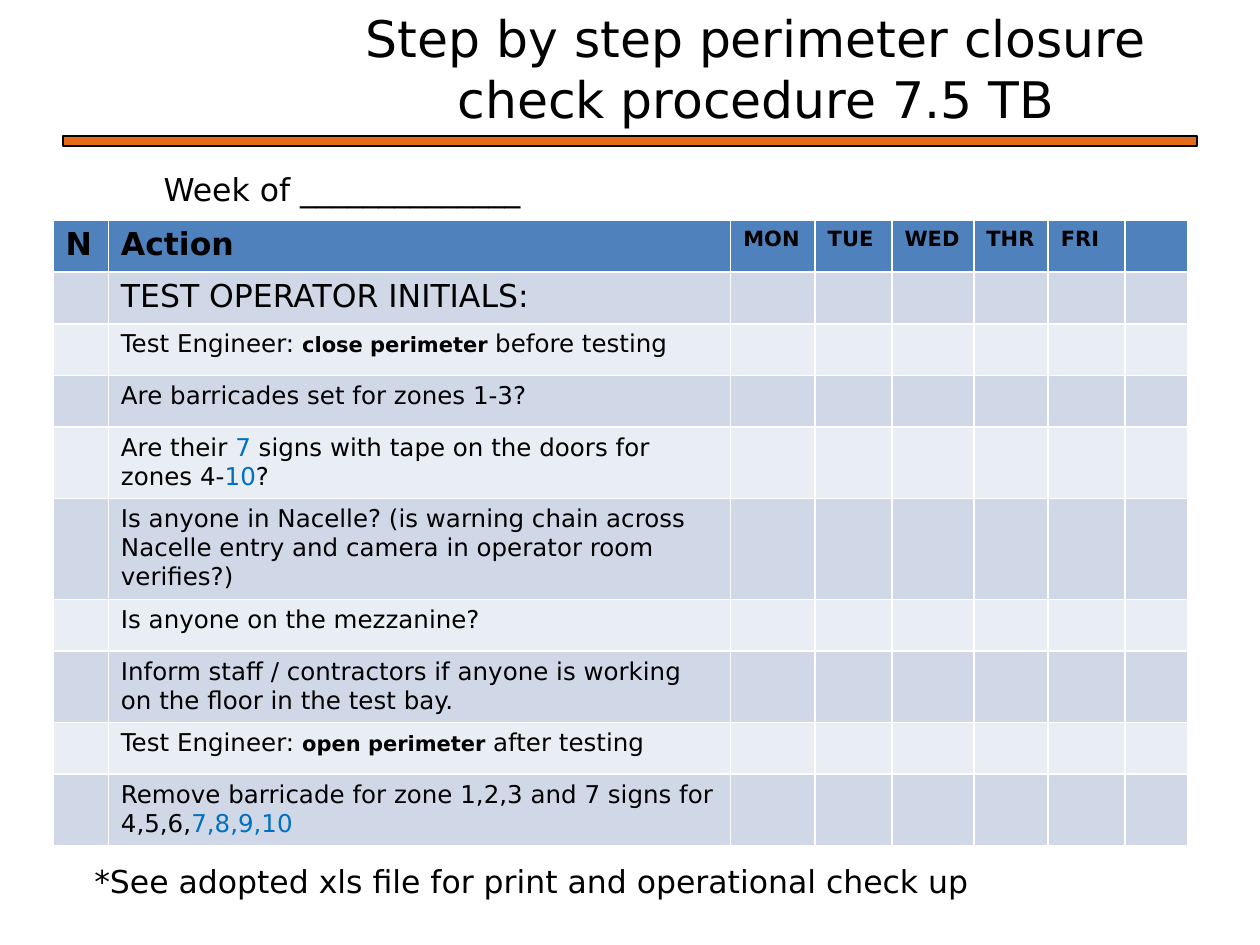
import pptx
import pptx.util
import pptx.dml.color
import pptx.enum.shapes
import pptx.enum.text

Inches = pptx.util.Inches
Pt = pptx.util.Pt
BLACK, BLUE = "000000", "0070C0"


def color(hex_string):
    return pptx.dml.color.RGBColor.from_string(hex_string)


def write(paragraph, runs, size, bold=False):
    """Fill a paragraph with (text, changes) runs; changes may set size, bold or color."""
    paragraph.font.name = "DejaVu Sans"
    paragraph.font.size = Pt(size)
    paragraph.font.bold = bold
    paragraph.font.color.rgb = color(BLACK)
    for text, changes in runs:
        run = paragraph.add_run()
        run.text = text
        if "size" in changes:
            run.font.size = Pt(changes["size"])
        if "bold" in changes:
            run.font.bold = changes["bold"]
        if "color" in changes:
            run.font.color.rgb = color(changes["color"])


presentation = pptx.Presentation()
presentation.slide_width = Inches(10)
presentation.slide_height = Inches(7.5)
slide = presentation.slides.add_slide(presentation.slide_layouts[6])

# Orange rule below the title
rule = slide.shapes.add_shape(
    pptx.enum.shapes.MSO_SHAPE.RECTANGLE, Inches(0.5), Inches(1.08), Inches(9), Inches(0.08))
rule.shadow.inherit = False
rule.fill.solid()
rule.fill.fore_color.rgb = color("E56A17")
rule.line.color.rgb = color(BLACK)
rule.line.width = Pt(0.75)

# Title
title = slide.shapes.add_textbox(Inches(2.5), Inches(0.08), Inches(7), Inches(0.92))
title.text_frame.word_wrap = True
title.text_frame.vertical_anchor = pptx.enum.text.MSO_ANCHOR.MIDDLE
paragraph = title.text_frame.paragraphs[0]
paragraph.alignment = pptx.enum.text.PP_ALIGN.CENTER
write(paragraph, [("Step by step perimeter closure check procedure 7.5 TB", {})], 28.8)

# Checklist content
days = ["MON", "TUE", "WED", "THR", "FRI"]
emphasis = {"size": 12, "bold": True}
blue = {"color": BLUE}
actions = [
    [("TEST OPERATOR INITIALS:", {"size": 18})],
    [("Test Engineer: ", {}), ("close perimeter ", emphasis), ("before testing", {})],
    [("Are barricades set for zones 1-3?", {})],
    [("Are their ", {}), ("7 ", blue), ("signs with tape on the doors for zones 4-", {}),
     ("10", blue), ("?", {})],
    [("Is anyone in Nacelle? (is warning chain across Nacelle entry and camera "
      "in operator room verifies?)", {})],
    [("Is anyone on the mezzanine?", {})],
    [("Inform staff / contractors if anyone is working on the floor in the test bay.", {})],
    [("Test Engineer: ", {}), ("open perimeter ", emphasis), ("after testing", {})],
    [("Remove barricade for zone 1,2,3 and 7 signs for 4,5,6,", {}), ("7,8,9,10", blue)],
]
column_widths = [0.44, 4.94, 0.67, 0.61, 0.65, 0.59, 0.61, 0.5]
row_height = 0.41
row_count = len(actions) + 1

# Checklist table; its style draws the white grid
table = slide.shapes.add_table(
    row_count, len(column_widths), Inches(0.42), Inches(1.75),
    Inches(9), Inches(row_height * row_count)).table
for column, width in zip(table.columns, column_widths):
    column.width = Inches(width)
for index, row in enumerate(table.rows):
    row.height = Inches(row_height)
    for cell in row.cells:
        cell.fill.solid()
        band = "D0D8E8" if index % 2 else "E9EDF4"
        cell.fill.fore_color.rgb = color(band if index else "4F81BD")

for index, heading in enumerate(["N", "Action"] + days):
    size = 12 if heading in days else 18
    write(table.cell(0, index).text_frame.paragraphs[0], [(heading, {})], size, bold=True)
for index, runs in enumerate(actions, start=1):
    write(table.cell(index, 1).text_frame.paragraphs[0], runs, 14)

# Week line above the table and note below it
for text, left, top, width in [
    ("Week of ______________", 1.2, 1.3, 3.57),
    ("*See adopted xls file for print and operational check up", 0.65, 6.79, 7.27),
]:
    label = slide.shapes.add_textbox(Inches(left), Inches(top), Inches(width), Inches(0.4))
    label.text_frame.word_wrap = False
    label.text_frame.auto_size = pptx.enum.text.MSO_AUTO_SIZE.SHAPE_TO_FIT_TEXT
    write(label.text_frame.paragraphs[0], [(text, {})], 18)

presentation.save("out.pptx")
